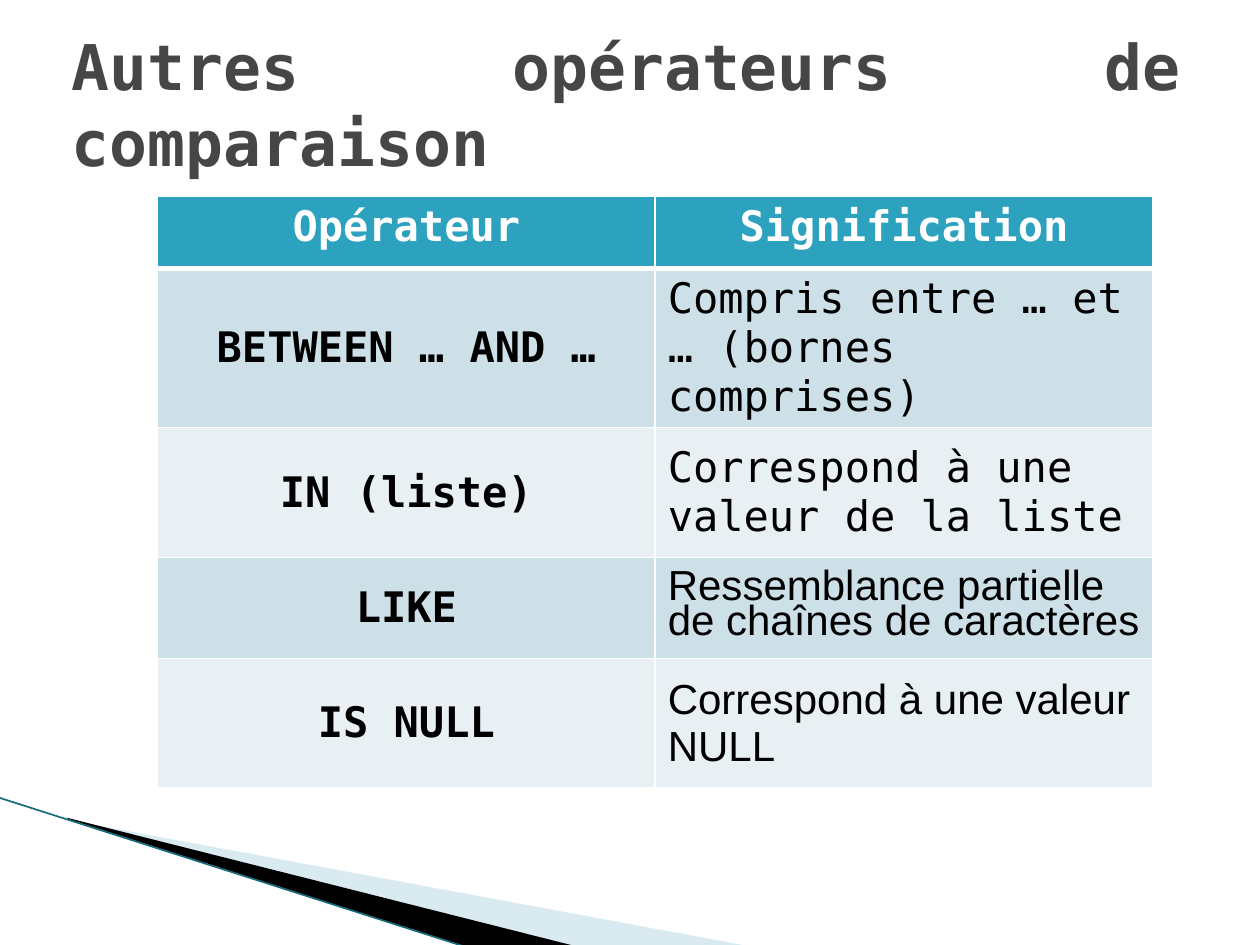
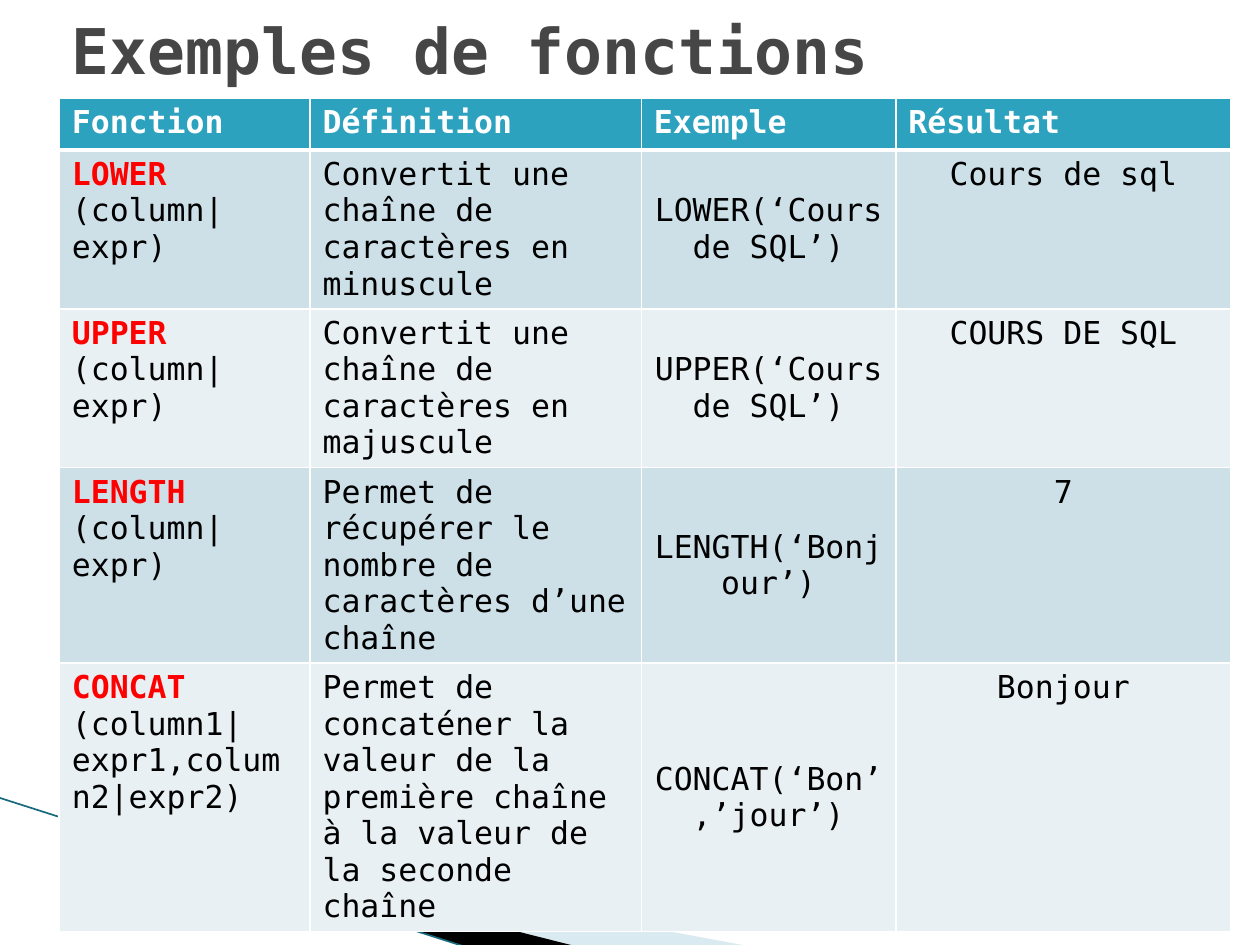
from dataclasses import dataclass, field

from lxml import etree
from pptx import Presentation
from pptx.dml.color import RGBColor
from pptx.enum import shapes, text
from pptx.oxml import ns
from pptx.slide import Slide
from pptx.text.text import TextFrame
from pptx.util import Inches, Length, Pt

WHITE = RGBColor(0xFF, 0xFF, 0xFF)
BLACK = RGBColor(0, 0, 0)
RED = RGBColor(0xFF, 0, 0)
GREY = RGBColor(0x46, 0x46, 0x46)
TEAL = RGBColor(0x2D, 0xA2, 0xBF)
DARK = RGBColor(0x16, 0x6A, 0x7C)
PALE = RGBColor(0xA0, 0xCB, 0xDC)
BANDS = (RGBColor(0xCD, 0xE0, 0xE8), RGBColor(0xE8, 0xF0, 0xF4))

MONO = "DejaVu Sans Mono"
SANS = "Arial"
LEFT, MID, FULL = (text.PP_ALIGN.LEFT, text.PP_ALIGN.CENTER,
                   text.PP_ALIGN.JUSTIFY)
TOP, HALF = text.MSO_ANCHOR.TOP, text.MSO_ANCHOR.MIDDLE


@dataclass
class Wedge:
    points: list[tuple[float, float]]
    color: RGBColor
    alpha: int = 100


@dataclass
class Col:
    width: float
    align: text.PP_ALIGN = LEFT
    anchor: text.MSO_ANCHOR = TOP
    style: dict = field(default_factory=dict)


@dataclass
class Grid:
    left: float
    top: float
    size: int
    align: text.PP_ALIGN
    cols: list[Col]
    rows: list[float]
    cells: list[tuple[str, ...]]
    special: dict[tuple[int, int], dict] = field(default_factory=dict)


@dataclass
class Page:
    title: str
    top: float
    height: float
    grid: Grid


WEDGES = [
    Wedge([(0.55, 6.51), (5.95, 7.51), (4.56, 7.51), (0.55, 6.5)], PALE, 40),
    Wedge([(0.53, 6.49), (4.57, 7.51), (3.72, 7.52), (0.54, 6.5)], BLACK),
]

PAGES = [
    Page("Autres opérateurs de comparaison", 0.31, 1.02, Grid(
        1.25, 1.56, 24, MID,
        [Col(3.95, MID, HALF, {"bold": True}), Col(3.95, LEFT, HALF)],
        [0.57, 1.03, 1.03, 0.8, 1.03],
        [
            ("Opérateur", "Signification"),
            ("BETWEEN … AND …", "Compris entre … et … (bornes comprises)"),
            ("IN (liste)", "Correspond à une valeur de la liste"),
            ("LIKE", "Ressemblance partielle de chaînes de caractères"),
            ("IS NULL", "Correspond à une valeur NULL"),
        ],
        {(3, 1): {"font": SANS, "spacing": 0.75}, (4, 1): {"font": SANS}},
    )),
    Page("Exemples de fonctions", 0, 0.78, Grid(
        0.47, 0.78, 18, LEFT,
        [Col(1.99, style={"lead": RED}), Col(2.63), Col(2.02, MID, HALF),
         Col(2.66, MID)],
        [0.41, 1.25, 1.25, 1.54, 2.13],
        [
            ("Fonction", "Définition", "Exemple", "Résultat"),
            ("LOWER\n(column|expr)",
             "Convertit une chaîne de caractères en minuscule",
             "LOWER(‘Cours de SQL’)", "Cours de sql"),
            ("UPPER\n(column|expr)",
             "Convertit une chaîne de caractères en majuscule",
             "UPPER(‘Cours de SQL’)", "COURS DE SQL"),
            ("LENGTH\n(column|expr)",
             "Permet de récupérer le nombre de caractères d’une chaîne",
             "LENGTH(‘Bonjour’)", "7"),
            ("CONCAT\n(column1|expr1,column2|expr2)",
             "Permet de concaténer la valeur de la première chaîne "
             "à la valeur de la seconde chaîne",
             "CONCAT(‘Bon’,’jour’)", "Bonjour"),
        ],
    )),
]


def write(frame: TextFrame, words: str, *, size: int, color: RGBColor = BLACK,
          font: str = MONO, bold: bool = False, align: text.PP_ALIGN = LEFT,
          spacing: float | None = None, lead: RGBColor | None = None) -> None:
    for i, line in enumerate(words.split("\n")):
        para = frame.add_paragraph() if i else frame.paragraphs[0]
        first = lead is not None and i == 0
        para.alignment = align
        if spacing:
            para.line_spacing = spacing
        run = para.add_run()
        run.text = line
        run.font.name = font
        run.font.size = Pt(size)
        run.font.bold = bold or first
        run.font.color.rgb = lead if first else color


def draw_wedge(slide: Slide, wedge: Wedge) -> None:
    points = [(Inches(x), Inches(y)) for x, y in wedge.points]
    path = slide.shapes.build_freeform(*points[0], scale=1.0)
    path.add_line_segments(points[1:], close=True)
    shape = path.convert_to_shape()
    shape.shadow.inherit = False
    shape.line.fill.background()
    shape.fill.solid()
    shape.fill.fore_color.rgb = wedge.color
    if wedge.alpha < 100:
        tint = shape.fill._xPr.find(".//" + ns.qn("a:srgbClr"))
        etree.SubElement(tint, ns.qn("a:alpha"), val=str(wedge.alpha * 1000))


def draw_edge(slide: Slide) -> None:
    edge = slide.shapes.add_connector(
        shapes.MSO_CONNECTOR.STRAIGHT,
        Inches(-0.01), Inches(6.33), Inches(3.71), Inches(7.52))
    edge.line.color.rgb = DARK
    edge.line.width = Pt(0.95)
    etree.SubElement(edge._element.spPr, ns.qn("a:effectLst"))


def set_border(cell, side: str, width: Length) -> None:
    line = etree.SubElement(cell._tc.get_or_add_tcPr(), ns.qn(f"a:ln{side}"),
                            w=str(int(width)))
    fill = etree.SubElement(line, ns.qn("a:solidFill"))
    etree.SubElement(fill, ns.qn("a:srgbClr"), val=str(WHITE))


def draw_grid(slide: Slide, grid: Grid) -> None:
    table = slide.shapes.add_table(
        len(grid.rows), len(grid.cols), Inches(grid.left), Inches(grid.top),
        Inches(sum(col.width for col in grid.cols)),
        Inches(sum(grid.rows))).table
    for c, col in enumerate(grid.cols):
        table.columns[c].width = Inches(col.width)
    for r, height in enumerate(grid.rows):
        table.rows[r].height = Inches(height)
        for c, col in enumerate(grid.cols):
            cell = table.cell(r, c)
            thick = {0: "B", 1: "T"}.get(r)
            for side in "LRTB":
                set_border(cell, side, Pt(3 if side == thick else 1))
            cell.fill.solid()
            cell.fill.fore_color.rgb = BANDS[(r - 1) % 2] if r else TEAL
            cell.vertical_anchor = col.anchor if r else TOP
            if r:
                style = {"align": col.align, **col.style,
                         **grid.special.get((r, c), {})}
            else:
                style = {"align": grid.align, "color": WHITE, "bold": True}
            write(cell.text_frame, grid.cells[r][c], size=grid.size, **style)


def draw_title(slide: Slide, page: Page) -> None:
    title = slide.shapes.title
    title.left, title.top = Inches(0.47), Inches(page.top)
    title.width, title.height = Inches(9), Inches(page.height)
    frame = title.text_frame
    frame.word_wrap = True
    frame.auto_size = text.MSO_AUTO_SIZE.NONE
    frame.vertical_anchor = HALF
    write(frame, page.title, size=36, color=GREY, bold=True, align=FULL)


def main() -> None:
    deck = Presentation()
    deck.slide_width, deck.slide_height = Inches(10), Inches(7.5)
    for page in PAGES:
        slide = deck.slides.add_slide(deck.slide_layouts[5])
        for wedge in WEDGES:
            draw_wedge(slide, wedge)
        draw_edge(slide)
        draw_title(slide, page)
        draw_grid(slide, page.grid)
    deck.save("out.pptx")


if __name__ == "__main__":
    main()
